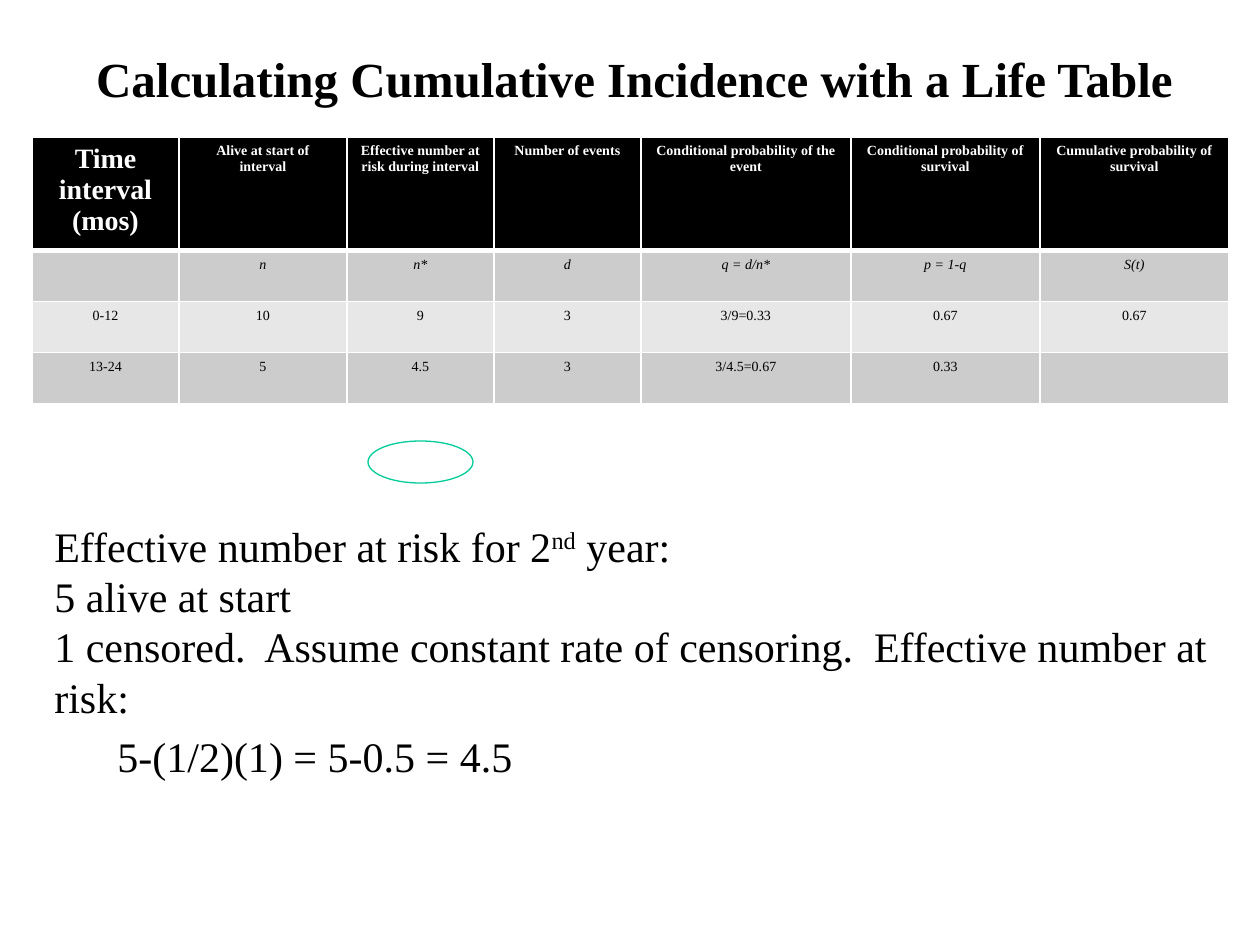
from dataclasses import dataclass

from lxml.etree import SubElement
from pptx import Presentation
from pptx.dml.color import RGBColor
from pptx.enum.shapes import MSO_SHAPE
from pptx.enum.text import MSO_ANCHOR, MSO_AUTO_SIZE, PP_ALIGN
from pptx.oxml.ns import qn
from pptx.util import Emu, Pt

PX = 914400 // 126
FONT = "Times New Roman"
BLACK = RGBColor(0x00, 0x00, 0x00)
WHITE = RGBColor(0xFF, 0xFF, 0xFF)
GREY = RGBColor(0xCC, 0xCC, 0xCC)
LIGHT = RGBColor(0xE7, 0xE7, 0xE7)
GREEN = RGBColor(0x00, 0xCC, 0x99)


@dataclass
class Box:
    x: int
    y: int
    w: int
    h: int

    def emu(self) -> list[Emu]:
        return [px(v) for v in (self.x, self.y, self.w, self.h)]


@dataclass
class Row:
    texts: list[str]
    height: int
    fill: RGBColor
    color: RGBColor = BLACK
    bold: bool = False
    italic: bool = False
    bottom: int = 1


COLUMNS = [147, 168, 147, 147, 210, 189, 189]
ROWS = [
    Row(["Time interval (mos)", "Alive at start of interval",
         "Effective number at risk during interval", "Number of events",
         "Conditional probability of the event",
         "Conditional probability of survival",
         "Cumulative probability of survival"],
        105, BLACK, WHITE, bold=True, bottom=3),
    Row(["", "n", "n*", "d", "q = d/n*", "p = 1-q", "S(t)"],
        51, GREY, italic=True),
    Row(["0-12", "10", "9", "3", "3/9=0.33", "0.67", "0.67"], 51, LIGHT),
    Row(["13-24", "5", "4.5", "3", "3/4.5=0.67", "0.33", ""], 51, GREY),
]


def px(value: int) -> Emu:
    return Emu(value * PX)


def style(font, size: int, color: RGBColor = BLACK, bold: bool = False,
          italic: bool = False) -> None:
    font.name, font.size = FONT, Pt(size)
    font.bold, font.italic = bold, italic
    font.color.rgb = color


def set_borders(cell, top: int, bottom: int) -> None:
    tc_pr = cell._tc.get_or_add_tcPr()
    widths = {"a:lnL": 1, "a:lnR": 1, "a:lnT": top, "a:lnB": bottom}
    for i, (tag, width) in enumerate(widths.items()):
        ln = SubElement(tc_pr, qn(tag), w=str(Pt(width)))
        fill = SubElement(ln, qn("a:solidFill"))
        SubElement(fill, qn("a:srgbClr"), val=str(WHITE))
        tc_pr.insert(i, ln)  # borders come before the cell fill


def add_life_table(slide, box: Box) -> None:
    table = slide.shapes.add_table(len(ROWS), len(COLUMNS), *box.emu()).table
    for column, width in zip(table.columns, COLUMNS):
        column.width = px(width)
    top = 1
    for i, row in enumerate(ROWS):
        table.rows[i].height = px(row.height)
        for j, text in enumerate(row.texts):
            cell = table.cell(i, j)
            cell.fill.solid()
            cell.fill.fore_color.rgb = row.fill
            set_borders(cell, top, row.bottom)
            cell.text_frame.text = text
            p = cell.text_frame.paragraphs[0]
            p.alignment = PP_ALIGN.CENTER
            for r in p.runs:
                style(r.font, 16 if i == j == 0 else 8, row.color,
                      row.bold, row.italic)
        top = row.bottom


def add_title(slide, box: Box) -> None:
    title = slide.shapes.title
    title.left, title.top, title.width, title.height = box.emu()
    tf = title.text_frame
    tf.text = "Calculating Cumulative Incidence with a Life Table "
    tf.vertical_anchor = MSO_ANCHOR.TOP
    tf.auto_size = MSO_AUTO_SIZE.SHAPE_TO_FIT_TEXT
    p = tf.paragraphs[0]
    p.alignment = PP_ALIGN.CENTER
    style(p.runs[0].font, 28, bold=True)


def add_explanation(slide, box: Box) -> None:
    tf = slide.shapes.add_textbox(*box.emu()).text_frame
    tf.word_wrap = True
    lines = [
        ["Effective number at risk for 2", "nd", " year:"],
        ["5 alive at start"],
        ["1 censored.  Assume constant rate of censoring.  "
         "Effective number at risk:"],
        ["5-(1/2)(1) = 5-0.5 = 4.5"],
    ]
    for i, parts in enumerate(lines):
        p = tf.add_paragraph() if i else tf.paragraphs[0]
        for part in parts:
            r = p.add_run()
            r.text = part
            style(r.font, 24)
            if part == "nd":
                r.font._element.set("baseline", "30000")
    # The closing formula is indented one level
    p.level = 1
    p.space_before = Pt(5)


def add_ellipse(slide, box: Box) -> None:
    sp = slide.shapes.add_shape(MSO_SHAPE.OVAL, *box.emu())
    sp.shadow.inherit = False
    sp.fill.background()
    sp.line.color.rgb = GREEN
    sp.line.width = Pt(0.75)


def main() -> None:
    prs = Presentation()
    prs.slide_width, prs.slide_height = px(1260), px(945)
    s = prs.slides.add_slide(prs.slide_layouts[5])
    add_life_table(s, Box(32, 137, sum(COLUMNS), sum(r.height for r in ROWS)))
    add_title(s, Box(42, 42, 1197, 72))
    add_explanation(s, Box(42, 514, 1197, 362))
    add_ellipse(s, Box(368, 441, 105, 42))
    prs.save("out.pptx")


if __name__ == "__main__":
    main()
